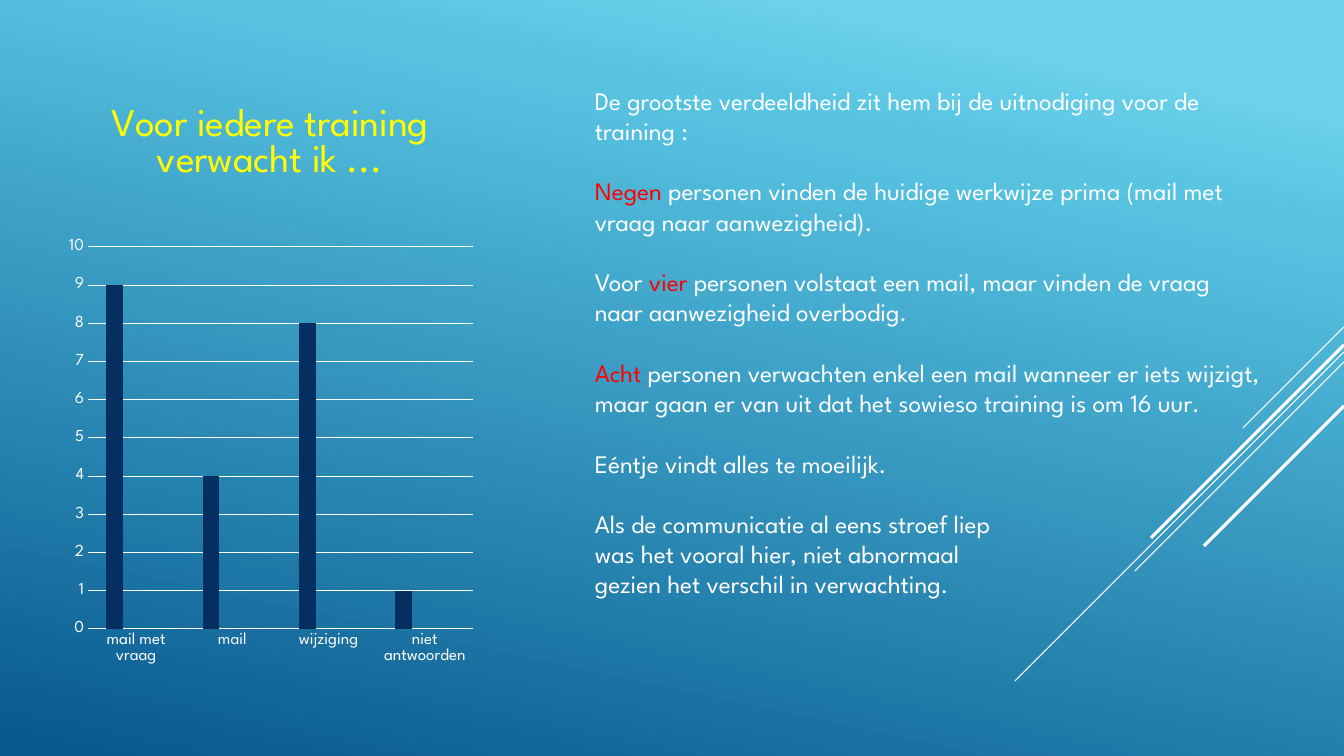
import copy
import pptx
import pptx.util
import pptx.dml.color
import pptx.chart.data
import pptx.enum.chart
import pptx.enum.shapes
import pptx.oxml
import pptx.oxml.ns
from lxml import etree

# Content
FONT = "League Spartan"
COLORS = {"white": "FFFFFF", "yellow": "FFFF00", "red": "FF0000",
          "navy": "052F61", "magenta": "A50E82", "teal": "14967C"}
BACKGROUND_STOPS = [(0.10, "6ED2EB"), (0.22, "58C4E2"), (1.0, "06588E")]
BACKGROUND_ANGLE = 102  # clockwise

CHART_TITLE = "Voor iedere training verwacht ik ..."
CATEGORIES = ["mail met vraag", "mail", "wijziging", "niet antwoorden"]
SERIES = [("Series 1", [9, 4, 8, 1], "navy"),
          ("Series 2", [None] * 4, "magenta"),
          ("Series 3", [None] * 4, "teal")]

# Each paragraph: (starts a new block, [(text, colour), ...])
FINDINGS = [
    (False, [("De grootste verdeeldheid zit hem bij de uitnodiging voor de training :", "white")]),
    (True, [("Negen", "red"),
            (" personen vinden de huidige werkwijze prima (mail met vraag naar aanwezigheid).", "white")]),
    (True, [("Voor ", "white"), ("vier", "red"),
            (" personen volstaat een mail, maar vinden de vraag naar aanwezigheid overbodig.", "white")]),
    (True, [("Acht", "red"),
            (" personen verwachten enkel een mail wanneer er iets wijzigt, maar gaan er van uit "
             "dat het sowieso training is om 16 uur.", "white")]),
    (True, [("Eéntje vindt alles te moeilijk.", "white")]),
    (True, [("Als de communicatie al eens stroef liep", "white")]),
    (False, [("was het vooral hier, niet abnormaal", "white")]),
    (False, [("gezien het verschil in verwachting.", "white")]),
]

# Geometry in px; stripes run at 45 degrees from the right edge: (top, length, points)
SLIDE_W, SLIDE_H = 1344, 756
CHART_BOX = (60, 80, 420, 598)
PLOT_BOX = (88, 247, 385, 382)
FINDINGS_BOX = (585, 80, 686, 559)
STRIPES = [(327, 101, 0.75), (352, 329, 0.75), (362, 209, 0.75),
           (345, 193, 2.25), (406, 140, 2.25)]
LINE_PITCH = 21.6


def px(n):
    return round(n * 914400 / 100.8)


def rgb(name):
    return pptx.dml.color.RGBColor.from_string(COLORS.get(name, name))


def style_font(font, size, color="white"):
    font.name = FONT
    font.size = pptx.util.Pt(size)
    font.bold = False
    font.color.rgb = rgb(color)


def style_line(line, width):
    line.color.rgb = rgb("white")
    line.width = pptx.util.Pt(width)


qn = pptx.oxml.ns.qn
prs = pptx.Presentation()
prs.slide_width, prs.slide_height = px(SLIDE_W), px(SLIDE_H)
slide = prs.slides.add_slide(prs.slide_layouts[6])

# Background gradient
background = slide.background.fill
background.gradient()
background.gradient_angle = 360 - BACKGROUND_ANGLE
stop_list = slide.element.find(".//" + qn("a:gsLst"))
stop_list.append(copy.deepcopy(stop_list[-1]))
for stop, (position, color) in zip(background.gradient_stops, BACKGROUND_STOPS):
    stop.position = position
    stop.color.rgb = rgb(color)

# Diagonal stripes
for top, length, width in STRIPES:
    stripe = slide.shapes.add_connector(
        pptx.enum.shapes.MSO_CONNECTOR.STRAIGHT,
        px(SLIDE_W), px(top), px(SLIDE_W - length), px(top + length))
    style_line(stripe.line, width)
    etree.SubElement(stripe.element.spPr, qn("a:effectLst"))

# Chart
answers = pptx.chart.data.CategoryChartData()
answers.categories = CATEGORIES
for name, values, _ in SERIES:
    answers.add_series(name, values)
chart = slide.shapes.add_chart(
    pptx.enum.chart.XL_CHART_TYPE.COLUMN_CLUSTERED, *map(px, CHART_BOX), answers).chart
style_font(chart.font, 10)
chart.has_legend = False
chart.has_title = True
chart_title = chart.chart_title.text_frame
chart_title.text = CHART_TITLE
style_font(chart_title.paragraphs[0].font, 28, "yellow")
chart.chart_title.include_in_layout = False

columns = chart.plots[0]
columns.gap_width, columns.overlap = 219, -27
columns.vary_by_categories = False
for series, (_, _, color) in zip(columns.series, SERIES):
    series.format.fill.solid()
    series.format.fill.fore_color.rgb = rgb(color)

for axis in (chart.category_axis, chart.value_axis):
    axis.major_tick_mark = axis.minor_tick_mark = pptx.enum.chart.XL_TICK_MARK.NONE
    style_font(axis.tick_labels.font, 12)
style_line(chart.category_axis.format.line, 0.75)
scale = chart.value_axis
scale.minimum_scale, scale.maximum_scale, scale.major_unit = 0, 10, 1
scale.format.line.fill.background()
style_line(scale.major_gridlines.format.line, 0.75)

# Fixed inner plot area, as fractions of the chart
fractions = {"x": (PLOT_BOX[0] - CHART_BOX[0]) / CHART_BOX[2],
             "y": (PLOT_BOX[1] - CHART_BOX[1]) / CHART_BOX[3],
             "w": PLOT_BOX[2] / CHART_BOX[2],
             "h": PLOT_BOX[3] / CHART_BOX[3]}
plot_area = chart.element.find(".//" + qn("c:plotArea"))
for old_layout in plot_area.findall(qn("c:layout")):
    plot_area.remove(old_layout)
layout = etree.Element(qn("c:layout"))
plot_area.insert(0, layout)
manual = etree.SubElement(layout, qn("c:manualLayout"))
settings = [("layoutTarget", "inner"), ("xMode", "edge"), ("yMode", "edge")]
settings += [(key, f"{value:.4f}") for key, value in fractions.items()]
for tag, value in settings:
    etree.SubElement(manual, qn("c:" + tag)).set("val", value)

# Findings
findings = slide.shapes.add_textbox(*map(px, FINDINGS_BOX)).text_frame
findings.word_wrap = True
for i, (new_block, runs) in enumerate(FINDINGS):
    paragraph = findings.add_paragraph() if i else findings.paragraphs[0]
    paragraph.line_spacing = pptx.util.Pt(LINE_PITCH)
    paragraph.space_before = pptx.util.Pt(LINE_PITCH if new_block else 0)
    paragraph.font.name = FONT
    paragraph.font.size = pptx.util.Pt(18)
    for text, color in runs:
        run = paragraph.add_run()
        run.text = text
        run.font.color.rgb = rgb(color)

prs.save("out.pptx")
